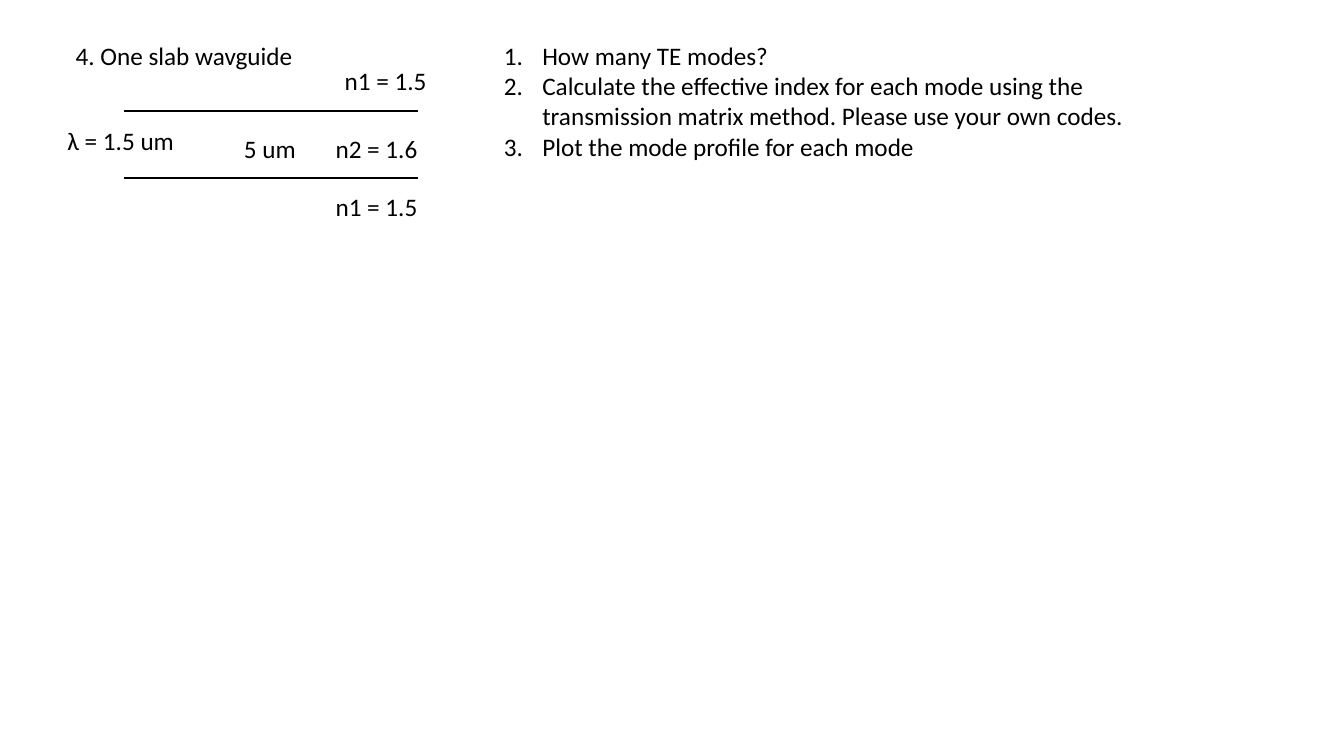
from dataclasses import dataclass
from lxml import etree
from pptx import Presentation
from pptx import util as u
from pptx.dml.color import RGBColor
from pptx.enum import shapes, text
from pptx.oxml import ns


@dataclass(frozen=True)
class Theme:
    ink: RGBColor = RGBColor(0, 0, 0)
    paper: RGBColor = RGBColor(255, 255, 255)
    font: str = "Calibri"
    size: u.Pt = u.Pt(18)
    rule: u.Pt = u.Pt(1.5)
    dent: u.Inches = u.Inches(0.38)


THEME = Theme()


def place(shape, box):
    shape.left, shape.top, shape.width, shape.height = map(u.Inches, box)


def write(shape, lines, wrap=False, count=False):
    frame = shape.text_frame
    frame.word_wrap = wrap
    frame.auto_size = text.MSO_AUTO_SIZE.SHAPE_TO_FIT_TEXT
    frame.vertical_anchor = text.MSO_ANCHOR.TOP
    for i, line in enumerate(lines):
        para = frame.add_paragraph() if i else frame.paragraphs[0]
        para.alignment = text.PP_ALIGN.LEFT
        if count:
            props = para._p.get_or_add_pPr()
            props.set("marL", str(THEME.dent))
            props.set("indent", str(-THEME.dent))
            mark = etree.SubElement(props, ns.qn("a:buAutoNum"))
            mark.set("type", "arabicPeriod")
        run = para.add_run()
        run.text = line
        run.font.name = THEME.font
        run.font.size = THEME.size
        run.font.color.rgb = THEME.ink


def add_label(slide, box, line):
    label = slide.shapes.add_textbox(*map(u.Inches, box))
    write(label, [line])


def add_title(slide, box, line):
    title = slide.shapes.title
    place(title, box)
    write(title, [line])


def add_guide(slide, box):
    left, top, width, height = box
    for y in (top, top + height):
        ends = (left, y, left + width, y)
        edge = slide.shapes.add_connector(
            shapes.MSO_CONNECTOR.STRAIGHT, *map(u.Inches, ends))
        edge.line.color.rgb = THEME.ink
        edge.line.width = THEME.rule
        etree.SubElement(edge._element.spPr, ns.qn("a:effectLst"))
    labels = (
        (1.09, 0.17, 0.72, "5 um"),
        (2, 0.17, 1.02, "n2 = 1.6"),
        (2, 0.75, 1.02, "n1 = 1.5"),
        (2.09, -0.5, 1.02, "n1 = 1.5"),
        (-0.66, 0.09, 1.29, "λ = 1.5 um"),
    )
    for dx, dy, wide, line in labels:
        add_label(slide, (left + dx, top + dy, wide, 0.4), line)


def add_tasks(slide, box):
    tasks = slide.shapes.add_textbox(*map(u.Inches, box))
    write(tasks, (
        "How many TE modes?",
        "Calculate the effective index for each mode using the "
        "transmission matrix method. Please use your own codes.",
        "Plot the mode profile for each mode",
    ), wrap=True, count=True)


def main():
    deck = Presentation()
    deck.slide_width = u.Inches(13.33)
    deck.slide_height = u.Inches(7.5)
    slide = deck.slides.add_slide(deck.slide_layouts.get_by_name("Title Only"))
    slide.background.fill.solid()
    slide.background.fill.fore_color.rgb = THEME.paper
    add_title(slide, (0.65, 0.35, 2.4, 0.4), "4. One slab wavguide")
    add_guide(slide, (1.23, 1.1, 2.92, 0.67))
    add_tasks(slide, (4.9, 0.35, 6.72, 1.31))
    deck.save("out.pptx")


if __name__ == "__main__":
    main()
